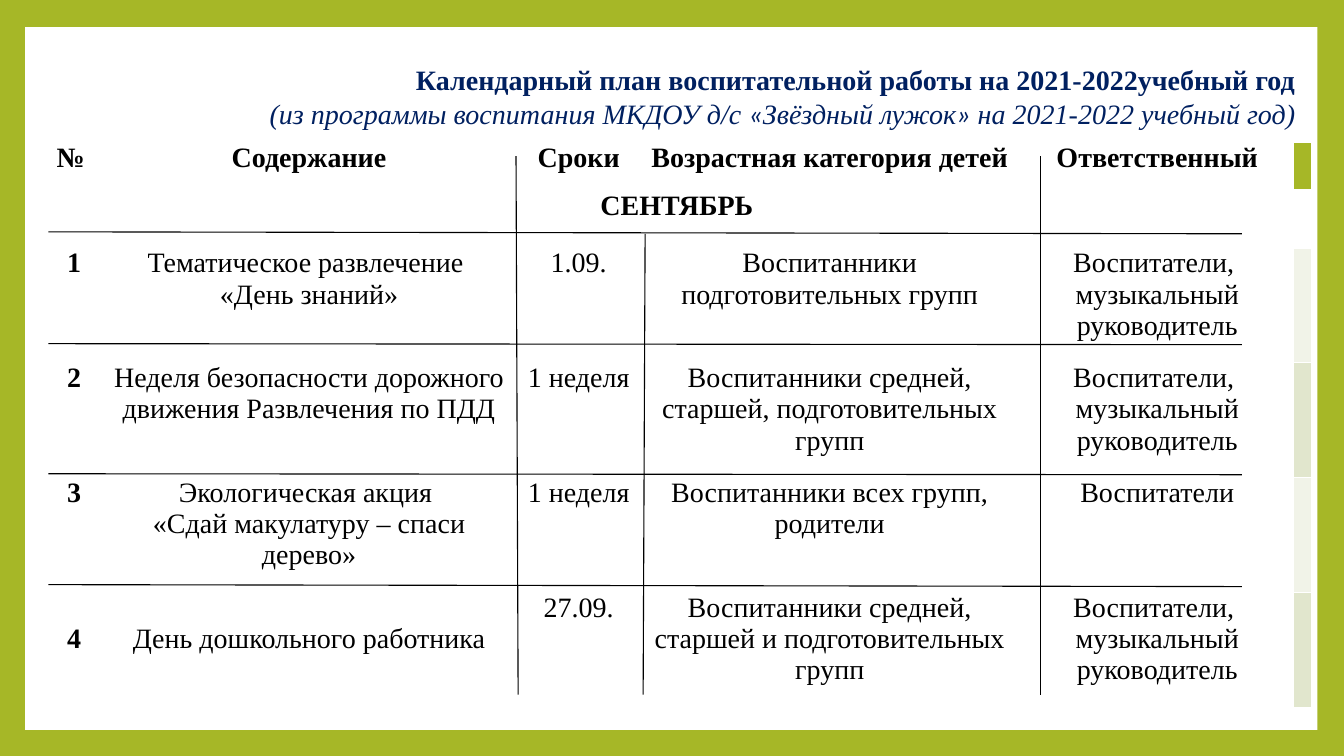
from lxml import etree
from pptx import Presentation
from pptx.dml.color import RGBColor
from pptx.enum.shapes import MSO_CONNECTOR, MSO_SHAPE
from pptx.enum.text import MSO_ANCHOR, PP_ALIGN
from pptx.oxml import parse_xml
from pptx.oxml.ns import nsdecls, qn
from pptx.util import Pt

HUES = {
    "frame": "A6B727", "white": "FFFFFF", "ink": "000000",
    "navy": "002060", "pale": "F1F3E8", "sage": "E1E6CD",
}
STAFF = "Воспитатели, \nмузыкальный руководитель"
ROWS = [
    ["№ ", "Содержание", "Сроки", "Возрастная категория детей", "Ответственный", ""],
    ["СЕНТЯБРЬ ", "", "", "", "", ""],
    ["1", "Тематическое развлечение \n«День знаний»", "1.09.",
     "Воспитанники подготовительных групп", STAFF, ""],
    ["2", "Неделя безопасности дорожного движения Развлечения по ПДД", "1 неделя",
     "Воспитанники средней, старшей, подготовительных групп", STAFF, ""],
    ["3", "Экологическая акция \n«Сдай макулатуру – спаси дерево»", "1 неделя",
     "Воспитанники всех групп, родители", "Воспитатели", ""],
    ["4", "День дошкольного работника", "27.09.",
     "Воспитанники средней, старшей и подготовительных групп", STAFF, ""],
]
WIDTHS = [36, 299.5, 85.7, 272.9, 195.1, 8.6]
HEIGHTS = [34.6, 41] + [82.1] * 4
EDGES = {0: "frame", 2: "pale", 3: "sage", 4: "pale", 5: "sage"}
TITLE = [
    [("Календарный план воспитательной работы на 2021-2022учебный год", "Times New Roman")],
    [("(из программы воспитания МКДОУ д/с ", "Times New Roman"), ("«", "Calibri"),
     ("Звёздный лужок", "Times New Roman"), ("»", "Calibri"),
     (" на 2021-2022 учебный год)", "Times New Roman")],
]
LINES = [
    (368.6, 111.6, 370.1, 496.1), (460.8, 167, 459.4, 496.1), (743, 111.6, 743, 496.1),
    (34.6, 245.5, 887, 246.2), (34.6, 338.4, 887, 339.1),
    (34.6, 417.6, 887, 419), (34.6, 165.6, 887, 167),
]


class Page:
    face = "Times New Roman"
    size = 20

    def __init__(self, deck):
        self.slide = deck.slides.add_slide(deck.slide_layouts[6])
        self.shapes = self.slide.shapes

    def hue(self, name):
        return RGBColor.from_string(HUES[name])

    def paint(self, fill, name):
        fill.solid()
        fill.fore_color.rgb = self.hue(name)

    def style(self, run, hue, bold, slant=False, face=face):
        font = run.font
        font.name, font.size = face, Pt(self.size)
        font.bold, font.italic = bold, slant
        font.color.rgb = self.hue(hue)

    def panel(self, x, y, w, h):
        box = self.shapes.add_shape(MSO_SHAPE.RECTANGLE, Pt(x), Pt(y), Pt(w), Pt(h))
        box.shadow.inherit = False
        self.paint(box.fill, "white")
        box.line.fill.background()

    def title(self, x, y, w, h):
        frame = self.shapes.add_textbox(Pt(x), Pt(y), Pt(w), Pt(h)).text_frame
        frame.word_wrap = True
        frame.vertical_anchor = MSO_ANCHOR.MIDDLE
        for i, parts in enumerate(TITLE):
            para = frame.add_paragraph() if i else frame.paragraphs[0]
            para.alignment = PP_ALIGN.RIGHT
            for text, face in parts:
                run = para.add_run()
                run.text = text
                self.style(run, "navy", i == 0, i == 1, face)

    def border(self, cell, head):
        props = cell._tc.get_or_add_tcPr()
        for i, side in enumerate("LRTB"):
            width = Pt(3) if head and side == "B" else Pt(1)
            props.insert(i, parse_xml(
                f'<a:ln{side} {nsdecls("a")} w="{width}"><a:solidFill>'
                f'<a:srgbClr val="{HUES["white"]}"/></a:solidFill></a:ln{side}>'))

    def cell(self, cell, text, bold):
        cell.margin_left = cell.margin_right = Pt(5)
        cell.margin_top = cell.margin_bottom = 0
        cell.text_frame.text = text
        for para in cell.text_frame.paragraphs:
            para.alignment = PP_ALIGN.CENTER
            for run in para.runs:
                self.style(run, "ink", bold)

    def table(self, x, y):
        grid = self.shapes.add_table(
            len(ROWS), len(WIDTHS), Pt(x), Pt(y), Pt(sum(WIDTHS)), Pt(sum(HEIGHTS))).table
        grid.first_row = grid.horz_banding = False
        for col, width in zip(grid.columns, WIDTHS):
            col.width = Pt(width)
        for row, height in zip(grid.rows, HEIGHTS):
            row.height = Pt(height)
        last = len(WIDTHS) - 1
        for r, texts in enumerate(ROWS):
            for c, text in enumerate(texts):
                cell = grid.cell(r, c)
                self.cell(cell, text, r < 2 or c == 0)
                if c == last:
                    cell.margin_left = cell.margin_right = 0
                if c == last and r in EDGES:
                    self.paint(cell.fill, EDGES[r])
                else:
                    cell.fill.background()
                self.border(cell, r == 0)
        for c in range(2):
            grid.cell(5, c).margin_top = Pt(22.2)
        grid.cell(1, 0).merge(grid.cell(1, last))

    def rule(self, *ends):
        line = self.shapes.add_connector(MSO_CONNECTOR.STRAIGHT, *map(Pt, ends))
        line.line.color.rgb = self.hue("ink")
        line.line.width = Pt(0.79)
        etree.SubElement(line._element.spPr, qn("a:effectLst"))


def main():
    deck = Presentation()
    deck.slide_width, deck.slide_height = Pt(960), Pt(540)
    page = Page(deck)
    page.paint(page.slide.background.fill, "frame")
    page.panel(18, 19.4, 923, 502)
    page.table(35, 101.5)
    page.title(21.6, 41, 910.8, 55.4)
    for ends in LINES:
        page.rule(*ends)
    deck.save("out.pptx")


if __name__ == "__main__":
    main()
